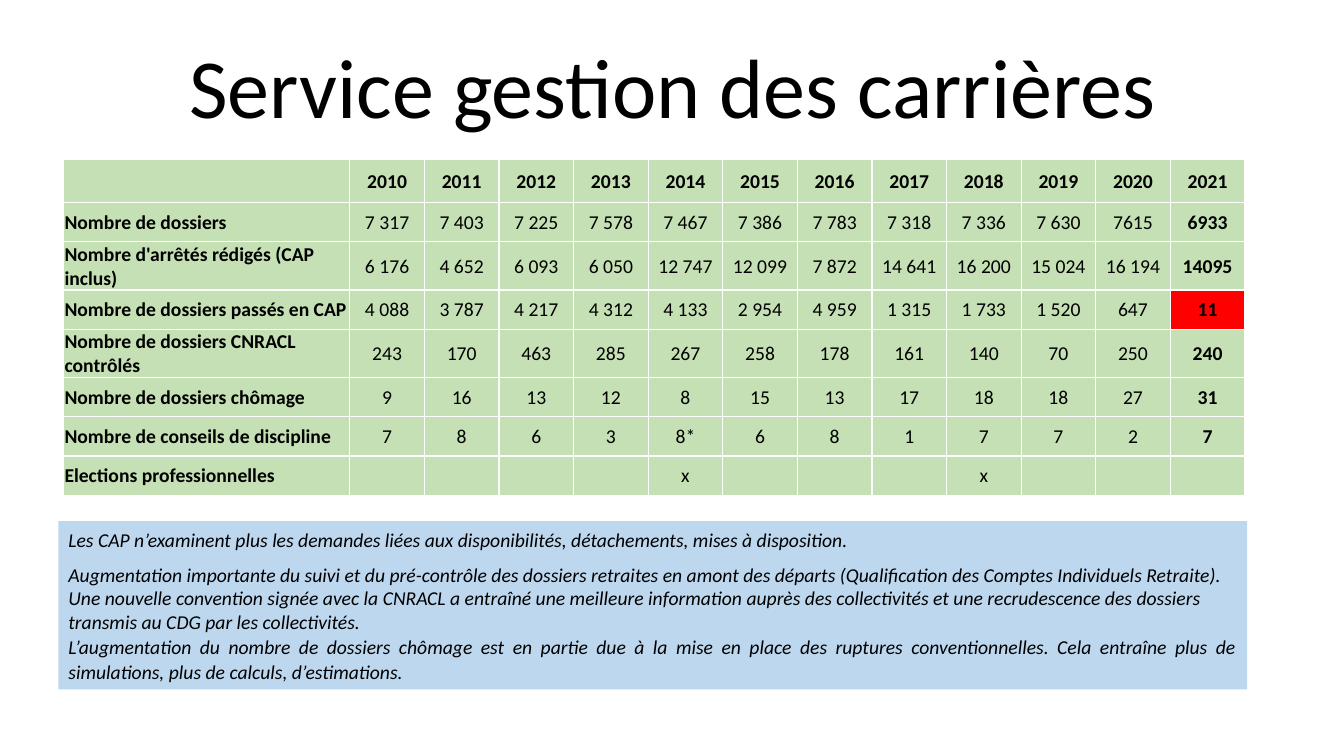
from lxml.etree import SubElement
from pptx import Presentation
from pptx.dml.color import RGBColor
from pptx.enum.shapes import MSO_SHAPE
from pptx.enum.text import MSO_ANCHOR, PP_ALIGN
from pptx.oxml.ns import qn
from pptx.util import Emu, Pt

PX = 9144  # 100 px to the inch
FONT = "Calibri"
COLOURS = {
    "text": "000000",
    "cell": "C5E0B4",
    "alert": "FF0000",
    "border": "FFFFFF",
    "note": "BDD7EE",
}

YEARS = [str(year) for year in range(2010, 2022)]
ROWS = [
    ("Nombre de dossiers",
     "7 317|7 403|7 225|7 578|7 467|7 386|7 783|7 318|7 336|7 630|7615|6933"),
    ("Nombre d'arrêtés rédigés (CAP inclus)",
     "6 176|4 652|6 093|6 050|12 747|12 099|7 872|14 641|16 200|15 024|16 194|14095"),
    ("Nombre de dossiers passés en CAP",
     "4 088|3 787|4 217|4 312|4 133|2 954|4 959|1 315|1 733|1 520|647|11"),
    ("Nombre de dossiers CNRACL contrôlés",
     "243|170|463|285|267|258|178|161|140|70|250|240"),
    ("Nombre de dossiers chômage", "9|16|13|12|8|15|13|17|18|18|27|31"),
    ("Nombre de conseils de discipline", "7|8|6|3|8*|6|8|1|7|7|2|7"),
    ("Elections professionnelles", "||||x||||x|||"),
]
ALERT_CELL = (3, 12)

SPACED = {"align": PP_ALIGN.JUSTIFY, "line_spacing": 1.07, "space_after": 8}
NOTES = [
    ("Les CAP n’examinent plus les demandes liées aux disponibilités, "
     "détachements, mises à disposition.", SPACED),
    ("Augmentation importante du suivi et du pré-contrôle des dossiers retraites en "
     "amont des départs (Qualification des Comptes Individuels Retraite).", {}),
    ("Une nouvelle convention signée avec la CNRACL a entraîné une meilleure "
     "information auprès des collectivités et une recrudescence des dossiers "
     "transmis au CDG par les collectivités.", {}),
    ("L’augmentation du nombre de dossiers chômage est en partie due à la mise en "
     "place des ruptures conventionnelles. Cela entraîne plus de simulations, plus "
     "de calculs, d’estimations.", SPACED),
]


def px(*lengths):
    return [Emu(length * PX) for length in lengths]


def colour(name):
    return RGBColor.from_string(COLOURS[name])


def write(para, text, size=14, bold=False, italic=False, align=PP_ALIGN.LEFT,
          line_spacing=None, space_after=None):
    para.alignment = align
    if line_spacing is not None:
        para.line_spacing = line_spacing
    if space_after is not None:
        para.space_after = Pt(space_after)
    span = para.add_run()
    span.text = text
    span.font.name = FONT
    span.font.size = Pt(size)
    span.font.bold = bold
    span.font.italic = italic
    span.font.color.rgb = colour("text")


def add_title(page, text):
    box = page.shapes.add_textbox(*px(92, 22, 1150, 137))
    frame = box.text_frame
    frame.word_wrap = True
    frame.vertical_anchor = MSO_ANCHOR.MIDDLE
    write(frame.paragraphs[0], text, size=60, align=PP_ALIGN.CENTER, line_spacing=0.9)


def add_borders(cell):
    properties = cell._tc.get_or_add_tcPr()
    for side in ("a:lnL", "a:lnR", "a:lnT", "a:lnB"):
        line = SubElement(properties, qn(side), w=str(Pt(1)))
        fill = SubElement(line, qn("a:solidFill"))
        SubElement(fill, qn("a:srgbClr"), val=COLOURS["border"])


def fill_cell(cell, text, fill="cell", **text_format):
    cell.margin_left, cell.margin_right, cell.margin_top, cell.margin_bottom = px(1, 1, 1, 0)
    cell.vertical_anchor = MSO_ANCHOR.MIDDLE
    add_borders(cell)
    cell.fill.solid()
    cell.fill.fore_color.rgb = colour(fill)
    if text:
        write(cell.text_frame.paragraphs[0], text, **text_format)


def add_figures(page):
    lines = [["", *YEARS]] + [[label, *values.split("|")] for label, values in ROWS]
    last = len(YEARS)
    widths = px(284, *[74] * last)
    heights = px(43, *[39] * len(ROWS))
    left, top = px(63, 158)
    table = page.shapes.add_table(len(lines), last + 1, left, top,
                                  sum(widths), sum(heights)).table
    table.first_row = table.horz_banding = False
    for column, width in zip(table.columns, widths):
        column.width = width
    for row, height in zip(table.rows, heights):
        row.height = height
    for r, line in enumerate(lines):
        for c, text in enumerate(line):
            fill_cell(table.cell(r, c), text,
                      fill="alert" if (r, c) == ALERT_CELL else "cell",
                      bold=r == 0 or c in (0, last),
                      align=PP_ALIGN.CENTER if c else PP_ALIGN.LEFT)


def add_notes(page):
    box = page.shapes.add_shape(MSO_SHAPE.RECTANGLE, *px(58, 517, 1179, 167))
    box.shadow.inherit = False
    box.fill.solid()
    box.fill.fore_color.rgb = colour("note")
    box.line.fill.background()
    frame = box.text_frame
    frame.word_wrap = True
    frame.vertical_anchor = MSO_ANCHOR.TOP
    for index, (text, text_format) in enumerate(NOTES):
        para = frame.add_paragraph() if index else frame.paragraphs[0]
        write(para, text, italic=True, **text_format)


def main():
    deck = Presentation()
    deck.slide_width, deck.slide_height = px(1333, 750)
    page = deck.slides.add_slide(deck.slide_layouts[6])

    # Heading
    add_title(page, "Service gestion des carrières")
    # Yearly figures
    add_figures(page)
    # Comments on the figures
    add_notes(page)

    deck.save("out.pptx")


if __name__ == "__main__":
    main()
